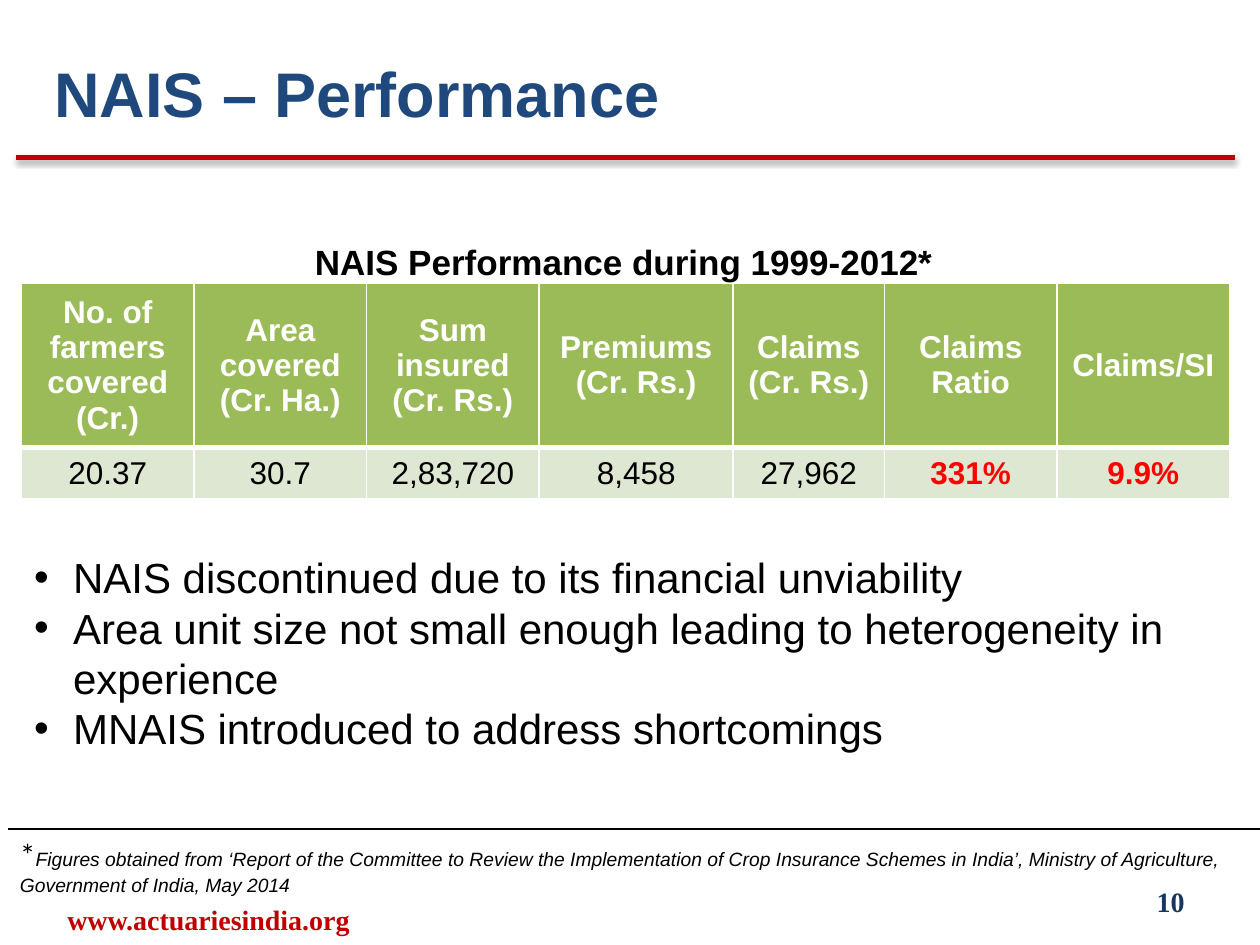
from dataclasses import dataclass

from lxml import etree
from pptx import Presentation
from pptx.dml.color import RGBColor
from pptx.enum.shapes import MSO_CONNECTOR
from pptx.enum.text import MSO_ANCHOR, MSO_AUTO_SIZE, PP_ALIGN
from pptx.oxml.ns import qn
from pptx.util import Inches, Pt

LEFT, MID, RIGHT = PP_ALIGN.LEFT, PP_ALIGN.CENTER, PP_ALIGN.RIGHT
TOP, CENTER = MSO_ANCHOR.TOP, MSO_ANCHOR.MIDDLE
NO_FIT = MSO_AUTO_SIZE.NONE
STRAIGHT = MSO_CONNECTOR.STRAIGHT
RED, BLACK, WHITE = "C00000", "000000", "FFFFFF"
SERIF = "Times New Roman"


@dataclass
class Run:
    text: str
    size: float
    color: str = BLACK
    bold: bool = False
    italic: bool = False
    face: str = "Arial"


@dataclass
class Label:
    box: tuple[float, float, float, float]
    runs: list[Run]
    align: PP_ALIGN = LEFT
    anchor: MSO_ANCHOR = TOP


@dataclass
class Rule:
    left: float
    right: float
    top: float
    color: str
    width: float
    shadow: bool = False


@dataclass
class Column:
    width: float
    head: str
    value: str
    alert: bool = False


def paint(text: str) -> RGBColor:
    return RGBColor.from_string(text)


def add_run(para, item: Run) -> None:
    run = para.add_run()
    run.text = item.text
    font = run.font
    font.name, font.size = item.face, Pt(item.size)
    font.bold, font.italic = item.bold, item.italic
    font.color.rgb = paint(item.color)


def place(shape, box: tuple[float, float, float, float]):
    shape.left, shape.top, shape.width, shape.height = map(Inches, box)
    frame = shape.text_frame
    frame.word_wrap, frame.auto_size = True, NO_FIT
    frame.vertical_anchor = TOP
    return frame


def add_label(slide, item: Label) -> None:
    frame = place(slide.shapes.add_textbox(0, 0, 0, 0), item.box)
    frame.vertical_anchor = item.anchor
    para = frame.paragraphs[0]
    para.alignment = item.align
    for run in item.runs:
        add_run(para, run)


def add_rule(slide, item: Rule) -> None:
    line = slide.shapes.add_connector(
        STRAIGHT, Inches(item.left), Inches(item.top), Inches(item.right), Inches(item.top)
    )
    line.line.color.rgb = paint(item.color)
    line.line.width = Pt(item.width)
    effect = etree.SubElement(line._element.spPr, qn("a:effectLst"))
    if item.shadow:
        shade = etree.SubElement(
            effect, qn("a:outerShdw"), blurRad=str(Pt(3.1)), dist=str(Pt(1.6)),
            dir="5400000", rotWithShape="0",
        )
        color = etree.SubElement(shade, qn("a:srgbClr"), val=BLACK)
        etree.SubElement(color, qn("a:alpha"), val="38000")


def add_edge(cell, side: str, width: float) -> None:
    edge = etree.SubElement(cell._tc.get_or_add_tcPr(), qn(f"a:ln{side}"), w=str(Pt(width)))
    fill = etree.SubElement(edge, qn("a:solidFill"))
    etree.SubElement(fill, qn("a:srgbClr"), val=WHITE)


def fill_cell(cell, run: Run, fill: str, edges: dict[str, float]) -> None:
    cell.vertical_anchor = CENTER
    para = cell.text_frame.paragraphs[0]
    para.alignment = MID
    add_run(para, run)
    for side, width in edges.items():
        add_edge(cell, side, width)
    cell.fill.solid()
    cell.fill.fore_color.rgb = paint(fill)


def add_grid(slide, cols: list[Column]) -> None:
    width = sum(col.width for col in cols)
    grid = slide.shapes.add_table(
        2, len(cols), Inches(0.17), Inches(2.25), Inches(width), Inches(1.71)
    ).table
    grid.rows[0].height, grid.rows[1].height = Inches(1.3), Inches(0.41)
    for spot, col in enumerate(cols):
        grid.columns[spot].width = Inches(col.width)
        head = Run(col.head, 18, WHITE, True)
        value = Run(col.value, 18, "FF0000" if col.alert else BLACK, col.alert)
        fill_cell(grid.cell(0, spot), head, "9BBB59", {"L": 1, "R": 1, "T": 1, "B": 3})
        fill_cell(grid.cell(1, spot), value, "DEE7D1", {"L": 1, "R": 1, "T": 3, "B": 1})


def add_list(shape, lines: list[str]) -> None:
    frame = place(shape, (0.17, 4.33, 9.58, 1.72))
    for spot, text in enumerate(lines):
        para = frame.add_paragraph() if spot else frame.paragraphs[0]
        props = para._p.get_or_add_pPr()
        props.set("marL", str(Inches(0.31)))
        props.set("indent", str(-Inches(0.31)))
        para.space_before, para.line_spacing = Pt(0), Pt(28.75)
        etree.SubElement(props, qn("a:buFont"), typeface="Arial")
        etree.SubElement(props, qn("a:buChar"), char="•")
        add_run(para, Run(text, 24))


COLS = [
    Column(1.37, "No. of farmers covered (Cr.)", "20.37"),
    Column(1.37, "Area covered (Cr. Ha.)", "30.7"),
    Column(1.37, "Sum insured (Cr. Rs.)", "2,83,720"),
    Column(1.54, "Premiums (Cr. Rs.)", "8,458"),
    Column(1.2, "Claims (Cr. Rs.)", "27,962"),
    Column(1.37, "Claims Ratio", "331%", True),
    Column(1.37, "Claims/SI", "9.9%", True),
]
POINTS = [
    "NAIS discontinued due to its financial unviability",
    "Area unit size not small enough leading to heterogeneity in experience",
    "MNAIS introduced to address shortcomings",
]
SOURCE = (
    "Figures obtained from ‘Report of the Committee to Review the Implementation of "
    "Crop Insurance Schemes in India’, Ministry of Agriculture, Government of India, May 2014"
)
LABELS = [
    Label((0.07, 7.1, 3.17, 0.4),
          [Run("www.actuariesindia.org", 16, RED, True, face=SERIF)], MID, CENTER),
    Label((7.17, 6.95, 2.33, 0.4),
          [Run("10", 16, "17375E", True, face=SERIF)], RIGHT, CENTER),
    Label((0.74, 1.86, 8.42, 0.4),
          [Run("NAIS Performance during 1999-2012*", 20, bold=True)], MID),
    Label((0.06, 6.58, 9.92, 0.61),
          [Run("*", 18, face="Calibri"), Run(SOURCE, 11, italic=True)]),
]
RULES = [
    Rule(0.13, 9.8, 1.25, RED, 3, True),
    Rule(0.06, 10, 6.58, BLACK, 0.75),
]


def main() -> None:
    deck = Presentation()
    deck.slide_width, deck.slide_height = Inches(10), Inches(7.5)
    slide = deck.slides.add_slide(deck.slide_layouts[1])
    title = place(slide.shapes.title, (0.33, 0.38, 8.17, 0.67)).paragraphs[0]
    title.alignment = LEFT
    add_run(title, Run("NAIS – Performance", 36, "1F497D", True))
    add_list(slide.placeholders[1], POINTS)
    add_grid(slide, COLS)
    for label in LABELS:
        add_label(slide, label)
    for rule in RULES:
        add_rule(slide, rule)
    deck.save("out.pptx")


if __name__ == "__main__":
    main()
